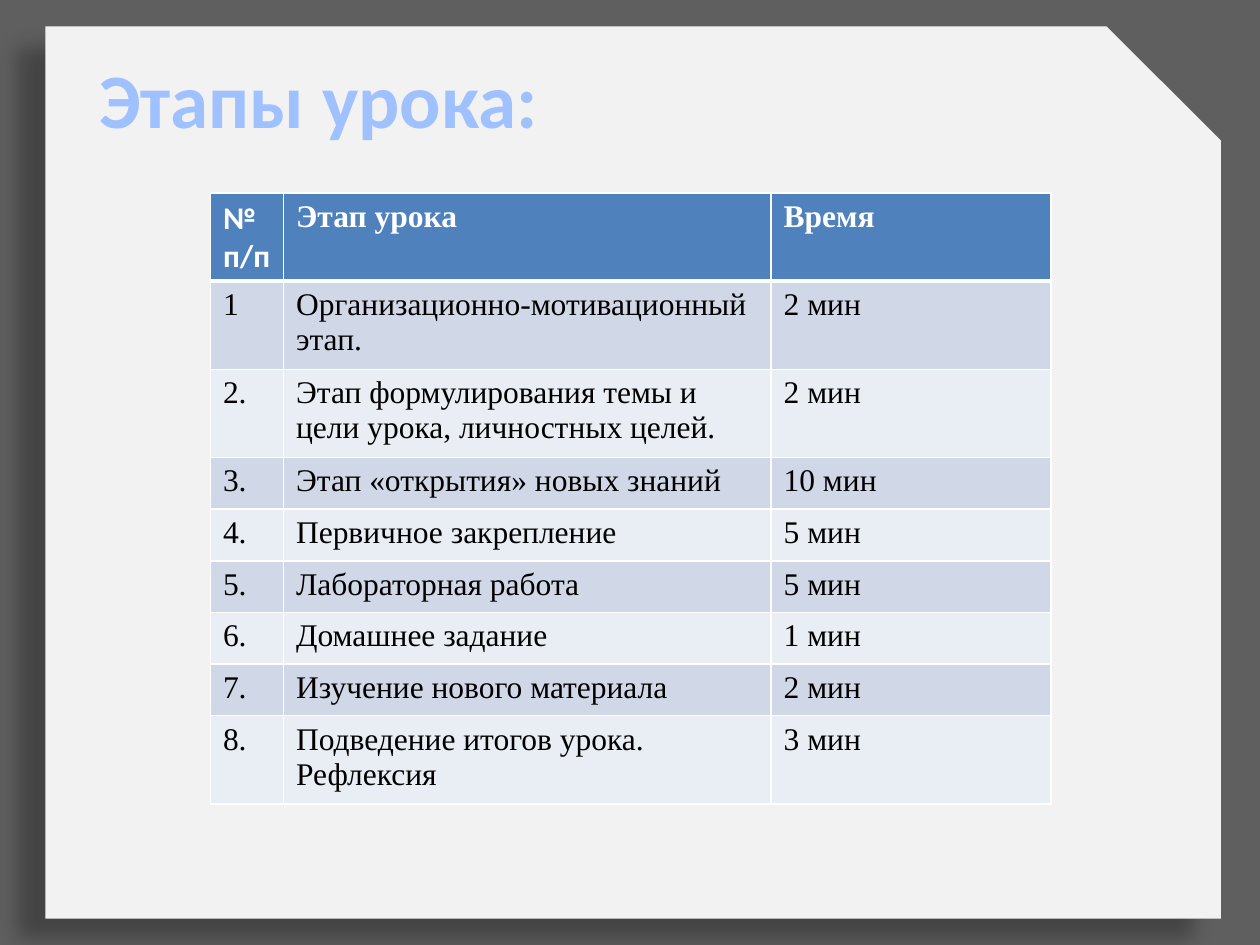
from lxml import etree
from pptx import Presentation
from pptx.dml.color import RGBColor
from pptx.enum.shapes import MSO_SHAPE as Shape
from pptx.enum.text import MSO_ANCHOR as Anchor, MSO_AUTO_SIZE as AutoSize, PP_ALIGN as Align
from pptx.oxml import parse_xml
from pptx.oxml.ns import nsdecls
from pptx.util import Inches, Pt

COLORS = {
    "frame": "5F5F5F", "sheet": "F2F2F2", "title": "A0C1FF",
    "header": "4F81BD", "odd": "D0D8E8", "even": "E9EDF4",
    "white": "FFFFFF", "black": "000000",
}
STAGES = [
    ("№ п/п", "Этап урока", "Время"),
    ("1", "Организационно-мотивационный  этап.", "2 мин"),
    ("2.", "Этап формулирования темы и цели урока, личностных целей.", "2 мин"),
    ("3.", "Этап «открытия» новых знаний", "10 мин"),
    ("4.", "Первичное закрепление", "5 мин"),
    ("5.", "Лабораторная работа", "5 мин"),
    ("6.", "Домашнее задание", "1 мин"),
    ("7.", "Изучение нового материала", "2 мин"),
    ("8.", "Подведение итогов урока. Рефлексия", "3 мин"),
]
COLUMN_WIDTHS = (0.58, 3.87, 2.22)
ROW_HEIGHT = 0.41


def format_run(run, font, size, color):
    run.font.name = font
    run.font.size = Pt(size)
    run.font.color.rgb = RGBColor.from_string(COLORS[color])


def add_border(cell, side, width):
    line = etree.SubElement(cell._tc.get_or_add_tcPr(), f"{{{A}}}{side}", w=str(Pt(width)))
    fill = etree.SubElement(line, f"{{{A}}}solidFill")
    etree.SubElement(fill, f"{{{A}}}srgbClr", val=COLORS["white"])


A = "http://schemas.openxmlformats.org/drawingml/2006/main"

prs = Presentation()
prs.slide_width, prs.slide_height = Inches(10), Inches(7.5)
slide = prs.slides.add_slide(prs.slide_layouts[5])

# Dark frame and the paper sheet with a cut corner, both with a soft shadow
backdrop = (
    (Shape.FRAME, (0, 0, 10, 7.5), 0.2, "frame"),
    (Shape.SNIP_1_RECTANGLE, (0.36, 0.21, 9.33, 7.08), 0.128, "sheet"),
)
for kind, box, adjustment, color in backdrop:
    panel = slide.shapes.add_shape(kind, *map(Inches, box))
    panel.adjustments[0] = adjustment
    panel.fill.solid()
    panel.fill.fore_color.rgb = RGBColor.from_string(COLORS[color])
    panel.line.fill.background()
    panel._element.spPr.append(parse_xml(
        f'<a:effectLst {nsdecls("a")}><a:outerShdw blurRad="{Pt(11.8)}" dist="{Pt(19.7)}" '
        f'dir="{141 * 60000}" algn="ctr" rotWithShape="0"><a:srgbClr val="{COLORS["black"]}">'
        '<a:alpha val="28000"/></a:srgbClr></a:outerShdw></a:effectLst>'))

# Title, brought in front of the sheet
title = slide.shapes.title
slide.shapes._spTree.append(title._element)
title.left, title.top, title.width, title.height = map(Inches, (0.67, 0.36, 3.72, 0.84))
heading = title.text_frame
heading.text = "Этапы урока:"
heading.word_wrap = False
heading.auto_size = AutoSize.SHAPE_TO_FIT_TEXT
heading.vertical_anchor = Anchor.TOP
heading.paragraphs[0].alignment = Align.CENTER
format_run(heading.paragraphs[0].runs[0], "Calibri", 44, "title")
heading.paragraphs[0].runs[0].font.bold = True

# Table of lesson stages
table = slide.shapes.add_table(
    len(STAGES), len(COLUMN_WIDTHS), Inches(1.67), Inches(1.53),
    Inches(sum(COLUMN_WIDTHS)), Inches(ROW_HEIGHT * len(STAGES))).table
for column, width in zip(table.columns, COLUMN_WIDTHS):
    column.width = Inches(width)
for r, stage in enumerate(STAGES):
    table.rows[r].height = Inches(ROW_HEIGHT)
    is_header = r == 0
    band = "header" if is_header else "odd" if r % 2 else "even"
    for c, wording in enumerate(stage):
        cell = table.cell(r, c)
        cell.text_frame.text = wording
        run = cell.text_frame.paragraphs[0].runs[0]
        font = "Calibri" if is_header and c == 0 else "Times New Roman"
        format_run(run, font, 18, "white" if is_header else "black")
        run.font.bold = is_header
        # Borders go before the fill; the rule under the header is thicker
        for side in ("lnL", "lnR", "lnT", "lnB"):
            thick = (r, side) in ((0, "lnB"), (1, "lnT"))
            add_border(cell, side, 3 if thick else 1)
        cell.fill.solid()
        cell.fill.fore_color.rgb = RGBColor.from_string(COLORS[band])

prs.save("out.pptx")
